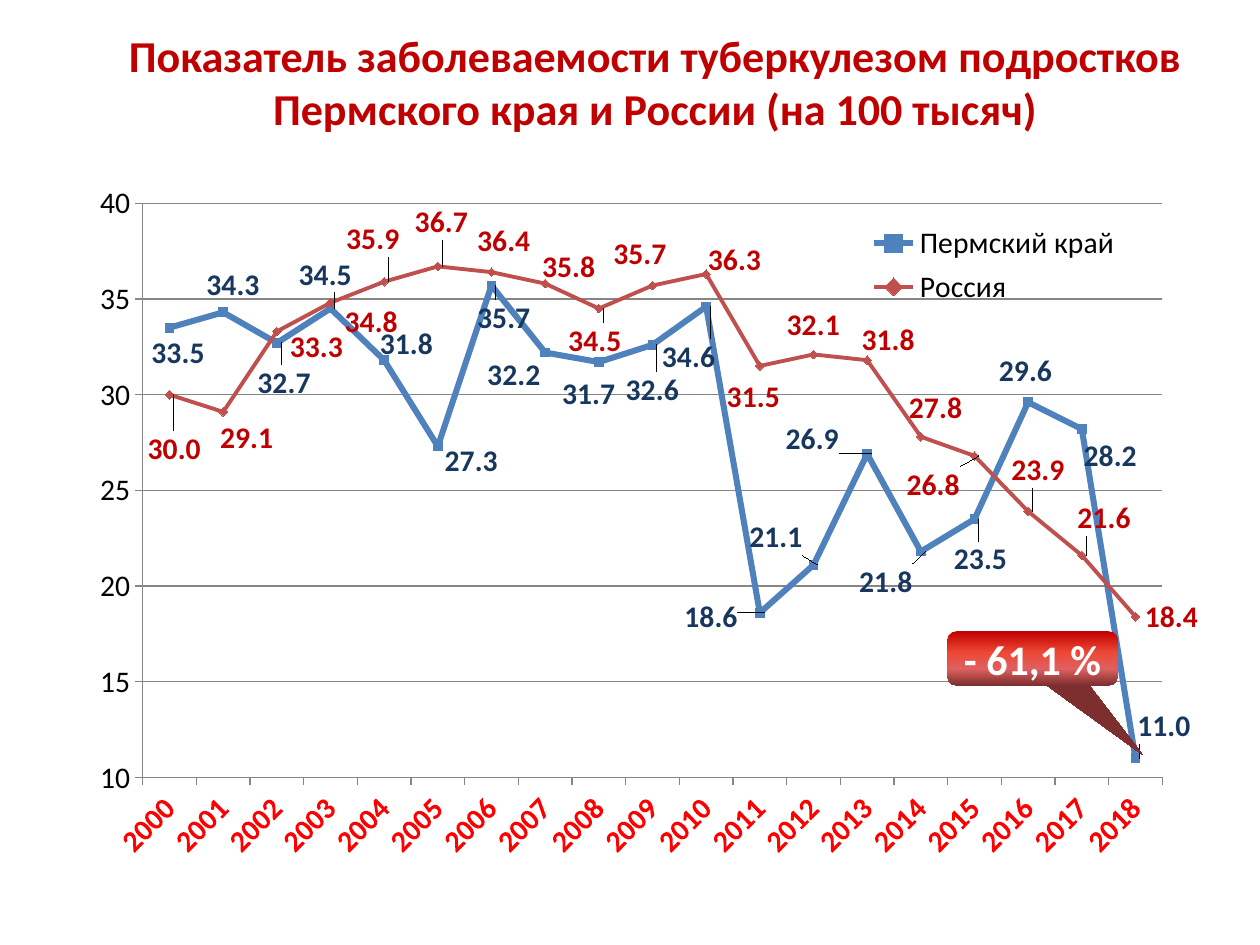
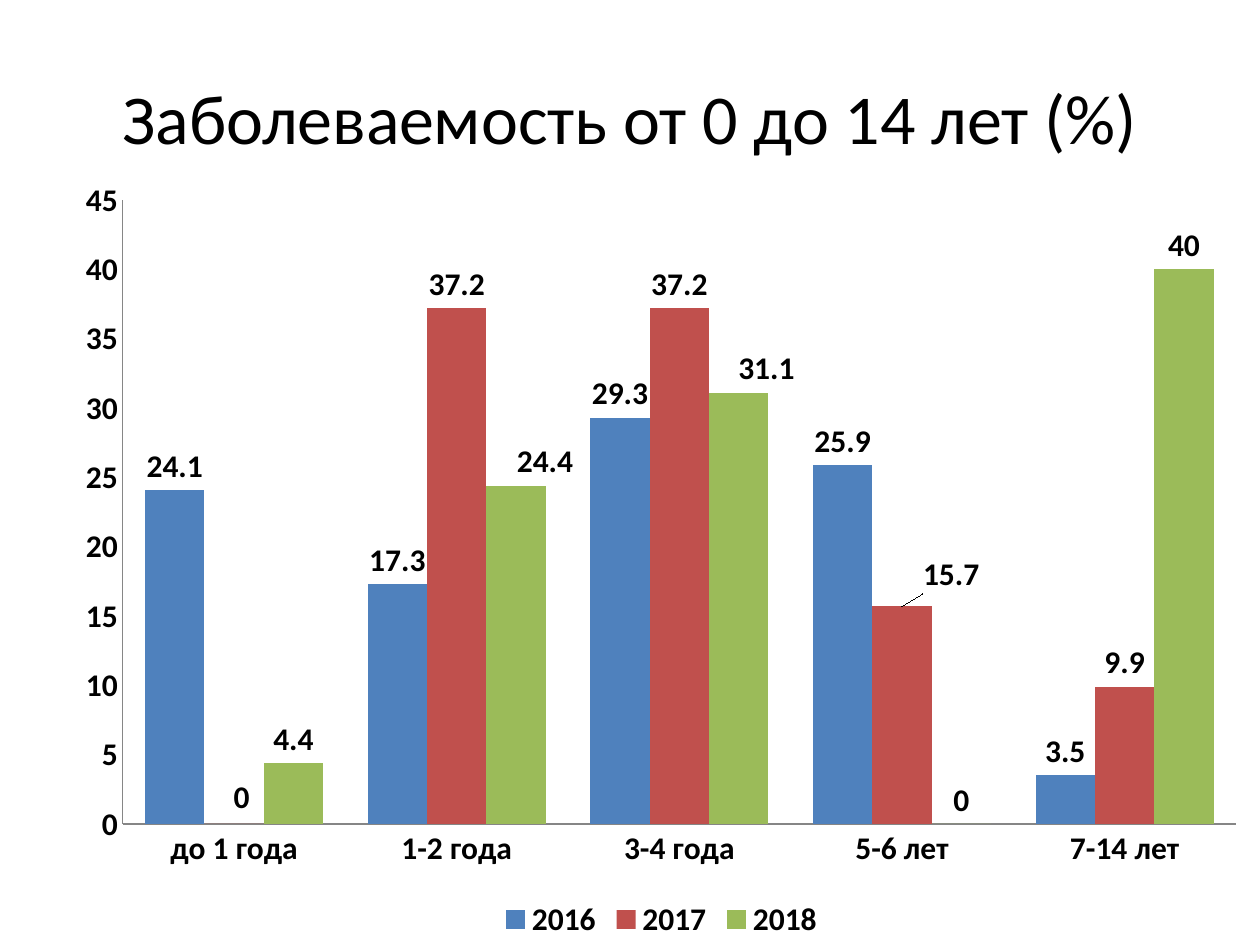
"""Builds two slides of charts on tuberculosis incidence among teenagers and children."""
from lxml import etree
from pptx import Presentation
from pptx.chart import data as chart_data
from pptx.dml.color import RGBColor
from pptx.enum import chart as ch, shapes, text
from pptx.oxml import ns, parse_xml
from pptx.util import Inches, Pt

THEME = {
    "font": "Calibri",
    "black": "000000", "white": "FFFFFF", "dark_red": "C00000", "bright_red": "FF0000",
    "navy": "17375E", "blue": "4F81BD", "red": "C0504D", "green": "9BBB59", "grey": "868686",
    "gradient": [(0, "C00000"), (40, "EE4836"), (70, "DE6060"), (100, "7D2F2F")],
    "teen_title": 25.2, "child_title": 40, "callout": 24, "teen_chart": 17.1, "child_chart": 18,
}

TEENS = {
    "title": "Показатель заболеваемости туберкулезом подростков Пермского края и России (на 100 тысяч)",
    "title_box": (0.75, 0.21, 8.9, 0.87),
    "title_format": {"size": THEME["teen_title"], "color": THEME["dark_red"], "bold": True},
    "kind": ch.XL_CHART_TYPE.LINE_MARKERS,
    "box": (0.51, 1.44, 9, 5.77),
    "plot": (0.07, 0.03, 0.91, 0.79),
    "size": THEME["teen_chart"],
    "bold": False,
    "label_place": ch.XL_LABEL_POSITION.RIGHT,
    "label_number": "#,##0.0",
    "categories": [str(year) for year in range(2000, 2019)],
    "series": [
        {"name": "Пермский край", "color": "blue", "label_color": "navy",
         "width": 3.5, "marker": ch.XL_MARKER_STYLE.SQUARE,
         "values": [33.5, 34.3, 32.7, 34.5, 31.8, 27.3, 35.7, 32.2, 31.7, 32.6,
                    34.6, 18.6, 21.1, 26.9, 21.8, 23.5, 29.6, 28.2, 11],
         "shifts": dict(enumerate([
             (-0.22, 0.2), (-0.21, -0.22), (-0.23, 0.32), (-0.33, -0.27), (-0.11, -0.13),
             (-0.02, 0.12), (-0.19, 0.26), (-0.54, 0.18), (-0.37, 0.25), (-0.29, 0.36),
             (-0.43, 0.4), (-0.68, 0.03), (-0.59, -0.22), (-0.73, -0.12), (-0.57, 0.24),
             (-0.24, 0.32), (-0.31, -0.25), (-0.06, 0.21), (-0.06, -0.26)]))},
        {"name": "Россия", "color": "red", "label_color": "dark_red",
         "width": 2.25, "marker": ch.XL_MARKER_STYLE.DIAMOND,
         "values": [30, 29.1, 33.3, 34.8, 35.9, 36.7, 36.4, 35.8, 34.5, 35.7,
                    36.3, 31.5, 32.1, 31.8, 27.8, 26.8, 23.9, 21.6, 18.4],
         "shifts": dict(enumerate([
             (-0.25, 0.43), (-0.1, 0.21), (0.03, 0.12), (0.04, 0.15), (-0.38, -0.34),
             (-0.26, -0.35), (-0.19, -0.25), (-0.1, -0.13), (-0.32, 0.26), (-0.39, -0.25),
             (-0.06, -0.11), (-0.34, 0.25), (-0.29, -0.23), (-0.12, -0.16), (-0.17, -0.23),
             (-0.62, 0.23), (-0.21, -0.33), (-0.11, -0.3)]))},
    ],
}

CHILDREN = {
    "title": "Заболеваемость от 0 до 14 лет (%)",
    "title_box": (0.5, 0.3, 9, 1.25),
    "title_format": {"size": THEME["child_title"], "color": THEME["black"]},
    "kind": ch.XL_CHART_TYPE.COLUMN_CLUSTERED,
    "box": (0.5, 1.31, 9.5, 6.19),
    "plot": (0.05, 0.045, 0.93, 0.8),
    "size": THEME["child_chart"],
    "bold": True,
    "label_place": ch.XL_LABEL_POSITION.OUTSIDE_END,
    "label_number": "General",
    "categories": ["до 1 года", "1-2 года", "3-4 года", "5-6 лет", "7-14 лет"],
    "series": [
        {"name": "2016", "color": "blue", "label_color": "black",
         "values": [24.1, 17.3, 29.3, 25.9, 3.5], "shifts": {}},
        {"name": "2017", "color": "red", "label_color": "black",
         "values": [0, 37.2, 37.2, 15.7, 9.9], "shifts": {0: (0.06, -0.02), 3: (0.39, -0.06)}},
        {"name": "2018", "color": "green", "label_color": "black",
         "values": [4.4, 24.4, 31.1, 0, 40], "shifts": {1: (0.23, 0), 2: (0.22, 0)}},
    ],
}

CALLOUT = {"text": "- 61,1 %", "box": (7.52, 5.01, 1.35, 0.43), "tail": (0.65, 1.79, 0.17)}

NO_LEADERS = (
    f'<c:extLst {ns.nsdecls("c")}><c:ext uri="{{CE6537A1-D6FC-4f65-9D91-7224C49458BB}}" '
    'xmlns:c15="http://schemas.microsoft.com/office/drawing/2012/chart">'
    '<c15:showLeaderLines val="0"/></c:ext></c:extLst>')


def set_font(font, size, color, bold=False):
    font.name, font.size, font.bold = THEME["font"], Pt(size), bold
    font.color.rgb = RGBColor.from_string(color)


def write_text(frame, words, size, color, bold=False, wrap=True):
    frame.word_wrap = wrap
    frame.vertical_anchor = text.MSO_ANCHOR.MIDDLE
    para = frame.paragraphs[0]
    para.alignment = text.PP_ALIGN.CENTER
    span = para.add_run()
    span.text = words
    set_font(span.font, size, color, bold)


def chart_layout(inner=False, **measures):
    layout = etree.Element(ns.qn("c:layout"))
    manual = etree.SubElement(layout, ns.qn("c:manualLayout"))
    if inner:
        etree.SubElement(manual, ns.qn("c:layoutTarget")).set("val", "inner")
    if "w" in measures:
        for mode in ("xMode", "yMode"):
            etree.SubElement(manual, ns.qn(f"c:{mode}")).set("val", "edge")
    for name, value in measures.items():
        etree.SubElement(manual, ns.qn(f"c:{name}")).set("val", f"{value:.4f}")
    return layout


def replace_layout(owner, position, layout):
    for old in owner.findall(ns.qn("c:layout")):
        owner.remove(old)
    owner.insert(position, layout)


def label_series(series, entry, content):
    labels = series.data_labels
    labels.show_value = True
    labels.number_format = content["label_number"]
    labels.number_format_is_linked = False
    labels.position = content["label_place"]
    style = (content["size"], THEME[entry["label_color"]], True)
    set_font(labels.font, *style)
    width, height = content["box"][2:]
    for index, (right, down) in entry["shifts"].items():
        label = series.points[index].data_label
        set_font(label.font, *style)
        label.position = content["label_place"]
        number = etree.Element(ns.qn("c:numFmt"), formatCode=content["label_number"], sourceLinked="0")
        mark = next(node for node in labels._element.findall(ns.qn("c:dLbl"))
                    if node.find(ns.qn("c:idx")).get("val") == str(index)).find(ns.qn("c:idx"))
        mark.addnext(number)
        mark.addnext(chart_layout(x=right / width, y=down / height))
    labels._element.append(parse_xml(NO_LEADERS))


def add_chart_slide(deck, content):
    page = deck.slides.add_slide(deck.slide_layouts[5])
    title = page.shapes.title
    title.left, title.top, title.width, title.height = map(Inches, content["title_box"])
    write_text(title.text_frame, content["title"], **content["title_format"])

    table = chart_data.CategoryChartData()
    table.categories = content["categories"]
    for entry in content["series"]:
        table.add_series(entry["name"], entry["values"])
    chart = page.shapes.add_chart(content["kind"], *map(Inches, content["box"]), table).chart
    chart.has_title = False
    set_font(chart.font, content["size"], THEME["black"], content["bold"])
    chart.plots[0].vary_by_categories = False
    replace_layout(chart._chartSpace.chart.plotArea, 0,
                   chart_layout(inner=True, **dict(zip("xywh", content["plot"]))))

    for axis in (chart.category_axis, chart.value_axis):
        axis.format.line.color.rgb = RGBColor.from_string(THEME["grey"])
        axis.major_tick_mark = axis.minor_tick_mark = ch.XL_TICK_MARK.NONE
    chart.value_axis.has_major_gridlines = False
    chart.has_legend = True
    chart.legend.position = ch.XL_LEGEND_POSITION.BOTTOM
    chart.legend.include_in_layout = False
    for series, entry in zip(chart.plots[0].series, content["series"]):
        label_series(series, entry, content)
    return page, chart


def style_lines(chart):
    for series, entry in zip(chart.plots[0].series, TEENS["series"]):
        color = RGBColor.from_string(THEME[entry["color"]])
        series.smooth = False
        series.format.line.color.rgb = color
        series.format.line.width = Pt(entry["width"])
        series.marker.style, series.marker.size = entry["marker"], 5
        series.marker.format.fill.solid()
        series.marker.format.fill.fore_color.rgb = color
        series.marker.format.line.color.rgb = color
    years, scale = chart.category_axis, chart.value_axis
    years.major_tick_mark = scale.major_tick_mark = ch.XL_TICK_MARK.OUTSIDE
    set_font(years.tick_labels.font, TEENS["size"], THEME["bright_red"], True)
    years._element.find(ns.qn("c:txPr")).find(ns.qn("a:bodyPr")).set("rot", "-2700000")
    scale.minimum_scale, scale.maximum_scale, scale.major_unit = 10, 40, 5
    scale.has_major_gridlines = True
    scale.major_gridlines.format.line.color.rgb = RGBColor.from_string(THEME["grey"])
    chart.legend.position = ch.XL_LEGEND_POSITION.RIGHT
    chart.legend.include_in_layout = True
    replace_layout(chart.legend._element, 1, chart_layout(x=0.71, y=0.05, w=0.24, h=0.13))


def style_columns(chart):
    chart.plots[0].gap_width = 75
    for series, entry in zip(chart.plots[0].series, CHILDREN["series"]):
        series.format.fill.solid()
        series.format.fill.fore_color.rgb = RGBColor.from_string(THEME[entry["color"]])


def add_callout(page):
    box = page.shapes.add_shape(shapes.MSO_SHAPE.ROUNDED_RECTANGULAR_CALLOUT,
                                *map(Inches, CALLOUT["box"]))
    for index, value in enumerate(CALLOUT["tail"]):
        box.adjustments[index] = value
    box.shadow.inherit = False
    box.line.fill.background()
    stops = "".join(f'<a:gs pos="{place * 1000}"><a:srgbClr val="{color}"/></a:gs>'
                    for place, color in THEME["gradient"])
    box._element.spPr.find(ns.qn("a:prstGeom")).addnext(parse_xml(
        f'<a:gradFill {ns.nsdecls("a")} rotWithShape="1"><a:gsLst>{stops}</a:gsLst>'
        '<a:lin ang="5400000" scaled="0"/></a:gradFill>'))
    write_text(box.text_frame, CALLOUT["text"], THEME["callout"], THEME["white"], bold=True, wrap=False)


def main():
    deck = Presentation()
    deck.slide_width, deck.slide_height = Inches(10), Inches(7.5)
    page, chart = add_chart_slide(deck, TEENS)
    style_lines(chart)
    add_callout(page)
    page, chart = add_chart_slide(deck, CHILDREN)
    style_columns(chart)
    deck.save("out.pptx")


if __name__ == "__main__":
    main()
